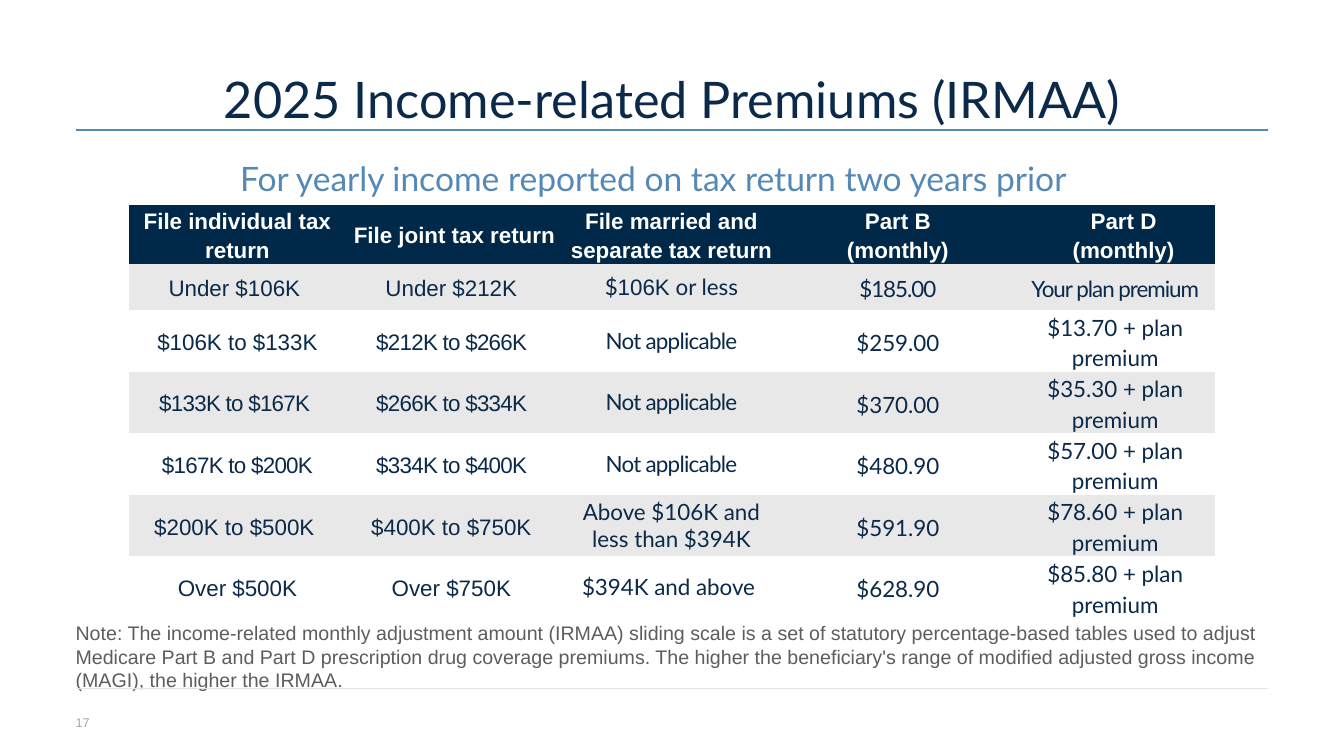
"""Build the slide on 2025 income-related Medicare premiums."""
import dataclasses

import lxml.etree
import pptx
import pptx.dml.color
import pptx.enum.shapes
import pptx.enum.text
import pptx.oxml.ns
import pptx.util

Pt = pptx.util.Pt
Align = pptx.enum.text.PP_ALIGN
Anchor = pptx.enum.text.MSO_ANCHOR


@dataclasses.dataclass(frozen=True)
class Theme:
    sans: str = "Arial"
    display: str = "Lato"
    navy: str = "0B2949"
    header: str = "002949"
    blue: str = "5489B6"
    white: str = "FFFFFF"
    band: str = "E8E8E8"
    note: str = "5C5E5B"
    number: str = "9EA7B0"
    rule: str = "E1E5E8"
    title_size: int = 36
    subtitle_size: int = 24
    table_size: int = 16
    note_size: int = 14
    number_size: int = 9


theme = Theme()


def rgb(value):
    return pptx.dml.color.RGBColor.from_string(value)


def write(para, text, font=theme.sans, size=theme.table_size, color=theme.navy,
          bold=False, tracking=0, align=Align.LEFT, spacing=1.0):
    para.alignment = align
    para.line_spacing = spacing
    span = para.add_run()
    span.text = text
    span.font.name = font
    span.font.size = Pt(size)
    span.font.bold = bold
    span.font.color.rgb = rgb(color)
    if tracking:
        span.font._element.set("spc", str(round(tracking * 100)))


deck = pptx.Presentation()
deck.slide_width, deck.slide_height = Pt(960), Pt(540)
page = deck.slides.add_slide(deck.slide_layouts[5])

title = page.shapes.title
subtitle = page.shapes.add_textbox(0, 0, 0, 0)
note = page.shapes.add_textbox(0, 0, 0, 0)
number = page.shapes.add_textbox(0, 0, 0, 0)

text_boxes = [
    (title, (54, 53.3, 852, 72), Anchor.TOP, "2025 Income-related Premiums (IRMAA)",
     dict(font=theme.display, size=theme.title_size, align=Align.CENTER, spacing=0.9)),
    (subtitle, (171.5, 109.5, 617, 36), Anchor.TOP,
     "For yearly income reported on tax return two years prior",
     dict(font=theme.display, size=theme.subtitle_size, color=theme.blue)),
    (note, (54, 437, 861, 57), Anchor.BOTTOM,
     "Note: The income-related monthly adjustment amount (IRMAA) sliding scale is a set of "
     "statutory percentage-based tables used to adjust Medicare Part B and Part D prescription "
     "drug coverage premiums. The higher the beneficiary's range of modified adjusted gross "
     "income (MAGI), the higher the IRMAA.",
     dict(size=theme.note_size, color=theme.note)),
    (number, (54, 510.5, 22, 11), Anchor.BOTTOM, "17",
     dict(size=theme.number_size, color=theme.number)),
]
for box, place, anchor, text, style in text_boxes:
    box.left, box.top, box.width, box.height = map(Pt, place)
    frame = box.text_frame
    frame.word_wrap = True
    frame.auto_size = pptx.enum.text.MSO_AUTO_SIZE.NONE
    frame.vertical_anchor = anchor
    frame.margin_left = frame.margin_top = frame.margin_right = frame.margin_bottom = 0
    write(frame.paragraphs[0], text, **style)
subtitle.text_frame.margin_top = Pt(3.6)

for height, color, width in [(93, theme.blue, 1), (491.8, theme.rule, 0.5)]:
    rule = page.shapes.add_connector(
        pptx.enum.shapes.MSO_CONNECTOR.STRAIGHT, Pt(54), Pt(height), Pt(906), Pt(height))
    rule.line.color.rgb = rgb(color)
    rule.line.width = Pt(width)
    lxml.etree.SubElement(rule._element.spPr, pptx.oxml.ns.qn("a:effectLst"))

premiums = [
    ["File individual tax return", "File joint tax return",
     "File married and separate tax return", "Part B\n(monthly)", "Part D\n(monthly)"],
    ["Under $106K ", "Under $212K ", "$|106K| or less", "$185.00", "Your plan premium"],
    [" $106K to $133K ", "$212K to $266K ", "Not applicable", "$259.00",
     "$13.70 + plan premium"],
    ["$133K to $167K ", "$266K to $334K ", "Not applicable", "$370.00",
     "$35.30 + plan premium"],
    [" $167K to $200K ", "$334K to $400K ", "Not applicable", "$480.90",
     "$57.00 + plan premium"],
    ["$200K to $500K ", "$400K to $750K ", "Above $106K and less than $394K", "$591.90",
     "$78.60 + plan premium"],
    ["Over $500K", "Over $750K ", "$394K and above ", "$628.90", "$85.80 + plan premium"],
]
tracking = {(1, 3): -0.7, (1, 4): -0.7, (2, 1): -0.5, (2, 2): -0.5}
tracking.update({(row, column): -0.5 for row in (3, 4) for column in range(3)})
column_widths = [155, 155, 155, 168.5, 142]
row_heights = [42, 33] + [44] * 5

table = page.shapes.add_table(
    len(premiums), len(column_widths), Pt(92.1), Pt(146.4),
    Pt(sum(column_widths)), Pt(sum(row_heights))).table
table._tbl.tblPr.find(pptx.oxml.ns.qn("a:tableStyleId")).text = (
    "{2D5ABB26-0587-4C30-8999-92F81FD0307C}")
for column, width in zip(table.columns, column_widths):
    column.width = Pt(width)
for row, height in zip(table.rows, row_heights):
    row.height = Pt(height)

for row, values in enumerate(premiums):
    heading = row == 0
    fill = theme.header if heading else (theme.band if row % 2 else theme.white)
    for column, value in enumerate(values):
        cell = table.cell(row, column)
        cell.fill.solid()
        cell.fill.fore_color.rgb = rgb(fill)
        cell.vertical_anchor = Anchor.MIDDLE
        cell.margin_top = cell.margin_bottom = 0
        cell.margin_left = Pt(17 if heading and column == 4 else 5)
        cell.margin_right = Pt(5)
        for index, line in enumerate(value.split("\n")):
            frame = cell.text_frame
            para = frame.add_paragraph() if index else frame.paragraphs[0]
            for part, piece in enumerate(line.split("|")):
                sans = heading or column < 2 or part == 1
                write(para, piece, font=theme.sans if sans else theme.display,
                      color=theme.white if heading else theme.navy, bold=heading,
                      tracking=tracking.get((row, column), 0), align=Align.CENTER,
                      spacing=1.0 if column == 2 and not heading else 1.15)

deck.save("out.pptx")
